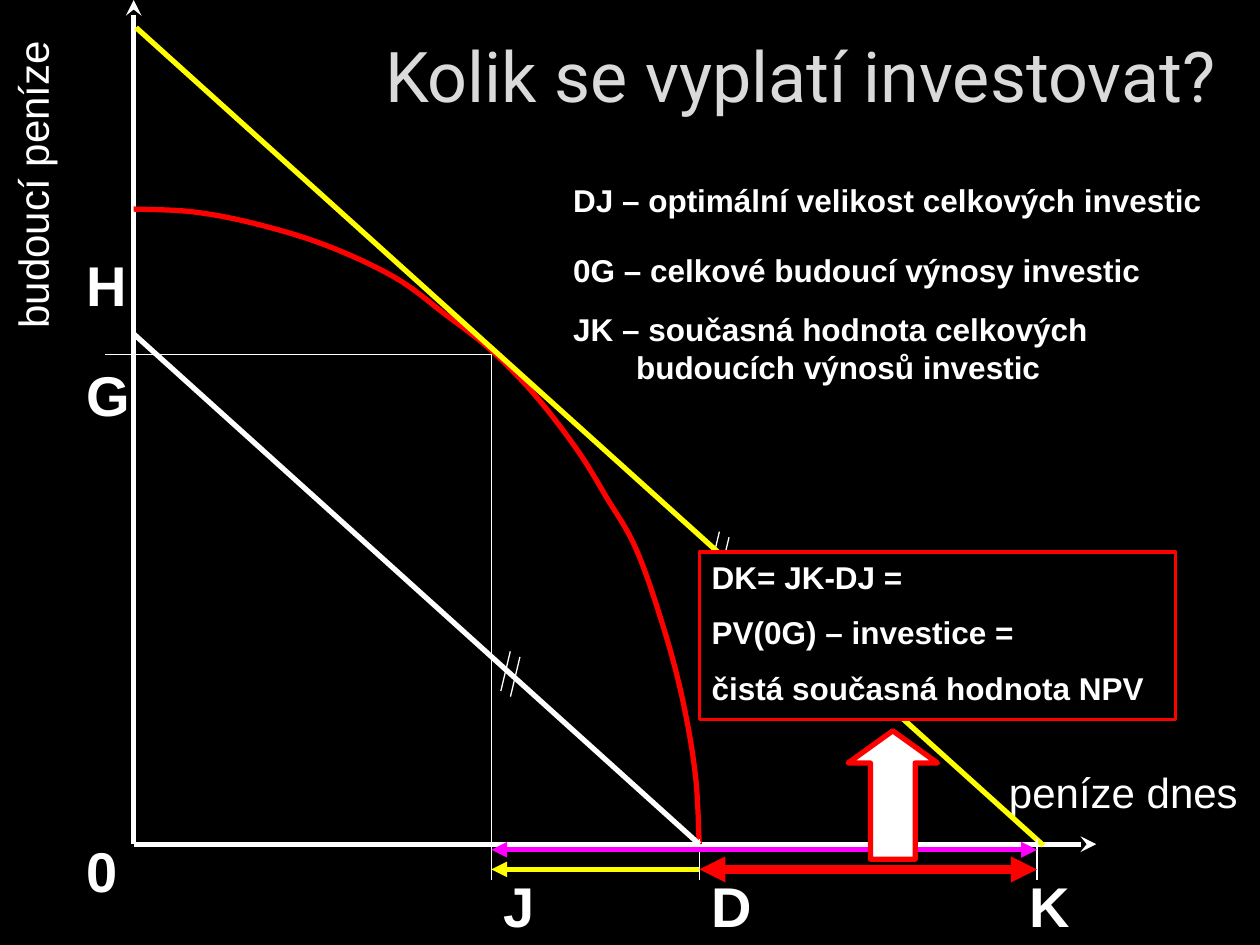
"""Build the slide on how much it pays to invest."""
from lxml import etree
from pptx import Presentation
from pptx.dml.color import RGBColor
from pptx.enum.shapes import MSO_CONNECTOR, MSO_SHAPE
from pptx.enum.text import MSO_ANCHOR, PP_ALIGN
from pptx.oxml.ns import qn
from pptx.util import Pt

STRAIGHT = MSO_CONNECTOR.STRAIGHT
RECTANGLE = MSO_SHAPE.RECTANGLE
UP_ARROW = MSO_SHAPE.UP_ARROW
TOP, MIDDLE = MSO_ANCHOR.TOP, MSO_ANCHOR.MIDDLE
LEFT, CENTER = PP_ALIGN.LEFT, PP_ALIGN.CENTER

COLORS = {
    "black": "000000",
    "white": "FFFFFF",
    "title": "DADADA",
    "red": "FF0000",
    "yellow": "FFFF00",
    "magenta": "FF00FF",
}

ORIGIN_X, AXIS_Y = 76.4, 482.4
J_X, D_X, K_X = 280.8, 399.6, 592.6
G_Y, H_Y = 202.4, 190.8
GUIDE_END, INVESTMENT_Y, VALUE_Y = 502.6, 496.8, 485.6

FRONTIER = [
    (399.6, 482.4), (397.4, 442.8), (390.2, 400.3), (379.4, 359.3),
    (363.6, 313.9), (346.3, 283.7), (329.8, 257), (306, 226.1),
    (280.8, 200.2), (254.9, 180), (225.4, 158.4), (185, 139.7),
    (144, 127.4), (109.4, 121), (76.4, 119.5),
]
LETTERS = [
    ("H", 42.5, 139.7), ("G", 42.5, 202.4), ("0", 42.5, 474.5),
    ("J", 280.8, 494.6), ("D", 399.6, 494.6), ("K", 581, 494.6),
]
NOTES = [
    ("DJ – optimální velikost celkových investic", 100.1, 29),
    ("0G – celkové budoucí výnosy investic", 139.7, 29),
    ("JK – současná hodnota celkových\v\tbudoucích výnosů investic", 173.5, 50.4),
]
NPV_TEXT = "DK= JK-DJ =\nPV(0G) – investice =\nčistá současná hodnota NPV"


def color(name):
    """Return the named colour."""
    return RGBColor.from_string(COLORS[name])


def write_text(shape, text, size=18, bold=False, font="Arial", fill="white",
               align=LEFT, anchor=TOP):
    """Write formatted paragraphs, one for each line of text, into a shape."""
    frame = shape.text_frame
    frame.word_wrap = True
    frame.vertical_anchor = anchor
    frame.text = text
    for index, paragraph in enumerate(frame.paragraphs):
        paragraph.alignment = align
        paragraph.space_before = Pt(10 if index else 0)
        for run in paragraph.runs:
            run.font.name = font
            run.font.size = Pt(size)
            run.font.bold = bold
            run.font.color.rgb = color(fill)


def add_text(slide, text, left, top, width, height, rotation=0, **text_format):
    """Add a text box."""
    box = slide.shapes.add_textbox(Pt(left), Pt(top), Pt(width), Pt(height))
    box.rotation = rotation
    write_text(box, text, **text_format)


def add_line(slide, start, end, stroke="white", width=3, head=None, tail=None):
    """Add a straight line with optional arrowheads at its start and end."""
    line = slide.shapes.add_connector(
        STRAIGHT, *(Pt(value) for value in (*start, *end)))
    line.line.color.rgb = color(stroke)
    line.line.width = Pt(width)
    properties = line.line._get_or_add_ln()
    for tag, arrow in (("a:headEnd", head), ("a:tailEnd", tail)):
        if arrow:
            etree.SubElement(properties, qn(tag), type=arrow)
    etree.SubElement(line._element.spPr, qn("a:effectLst"))


def add_outlined_shape(slide, kind, left, top, width, height, fill, line_width):
    """Add a preset shape with a red outline."""
    shape = slide.shapes.add_shape(
        kind, Pt(left), Pt(top), Pt(width), Pt(height))
    shape.shadow.inherit = False
    shape.fill.solid()
    shape.fill.fore_color.rgb = color(fill)
    shape.line.color.rgb = color("red")
    shape.line.width = Pt(line_width)
    return shape


def smooth_points(knots, steps=8):
    """Return points on the Catmull-Rom spline through the knots."""
    padded = [knots[0], *knots, knots[-1]]
    points = [knots[0]]
    for quad in zip(padded, padded[1:], padded[2:], padded[3:]):
        for step in range(1, steps + 1):
            t = step / steps
            points.append(tuple(
                b + t * (c - a) / 2
                + t ** 2 * (2 * a - 5 * b + 4 * c - d) / 2
                + t ** 3 * (3 * b - a - 3 * c + d) / 2
                for a, b, c, d in zip(*quad)))
    return points


def add_curve(slide, knots, stroke, width):
    """Add an open smooth curve through the knots."""
    points = [(Pt(x), Pt(y)) for x, y in smooth_points(knots)]
    builder = slide.shapes.build_freeform(*points[0])
    builder.add_line_segments(points[1:], close=False)
    curve = builder.convert_to_shape()
    curve.shadow.inherit = False
    curve.fill.background()
    curve.line.color.rgb = color(stroke)
    curve.line.width = Pt(width)


def add_axes(slide):
    """Add both axes with their names."""
    origin = (ORIGIN_X, AXIS_Y)
    add_line(slide, origin, (626.4, AXIS_Y), tail="stealth")
    add_text(slide, "peníze dnes", 569.5, 434.2, 153.4, 36, size=24)
    add_line(slide, origin, (ORIGIN_X, 0), tail="stealth")
    add_text(slide, "budoucí peníze", -79.2, 79.2, 195.1, 36,
             rotation=270, size=24)


def add_graph_lines(slide):
    """Add the frontier, the parallel lines and the guides."""
    add_curve(slide, FRONTIER, "red", 3)
    for x, y in ((291.6, 372.2), (411.1, 303.8)):
        for shift_x, shift_y in ((0, 0), (5.5, 3.2)):
            start = (x + shift_x, y + shift_y)
            end = (start[0] - 5.4, start[1] + 22.7)
            add_line(slide, start, end, width=0.75)
    add_line(slide, (77.8, 15.8), (596.2, 483.1), "yellow")
    add_line(slide, (ORIGIN_X, H_Y), (D_X, AXIS_Y))
    for x, top in ((J_X, G_Y), (D_X, 479.5), (K_X, 479.5)):
        add_line(slide, (x, top), (x, GUIDE_END), width=0.75)
    add_line(slide, (J_X, G_Y), (59.8, G_Y), width=0.75)


def add_spans(slide):
    """Add the arrows that measure the distances between J, D and K."""
    add_line(slide, (D_X, INVESTMENT_Y), (J_X, INVESTMENT_Y), "yellow",
             tail="triangle")
    add_line(slide, (J_X, VALUE_Y), (K_X, VALUE_Y), "magenta",
             head="triangle", tail="triangle")
    add_line(slide, (D_X, INVESTMENT_Y), (K_X, INVESTMENT_Y), "red", 5,
             head="triangle", tail="triangle")


def main():
    """Build and save the presentation."""
    presentation = Presentation()
    presentation.slide_width, presentation.slide_height = Pt(720), Pt(540)
    slide = presentation.slides.add_slide(presentation.slide_layouts[6])
    slide.background.fill.solid()
    slide.background.fill.fore_color.rgb = color("black")

    add_text(slide, "Kolik se vyplatí investovat?", 133.2, -2.2, 648, 90,
             size=40, font="Roboto", fill="title", align=CENTER, anchor=MIDDLE)
    add_axes(slide)
    add_graph_lines(slide)
    add_spans(slide)
    for letter, left, top in LETTERS:
        add_text(slide, letter, left, top, 33.8, 45.4, size=32, bold=True)
    for note, top, height in NOTES:
        add_text(slide, note, 320.4, top, 380.2, height, bold=True)
    npv_box = add_outlined_shape(
        slide, RECTANGLE, D_X, 315.4, 272.2, 95.8, "black", 2)
    write_text(npv_box, NPV_TEXT, bold=True)
    arrow = add_outlined_shape(
        slide, UP_ARROW, 484.6, 417.6, 51.1, 73.4, "white", 3)
    arrow.adjustments[1] = 0.36
    presentation.save("out.pptx")


if __name__ == "__main__":
    main()
